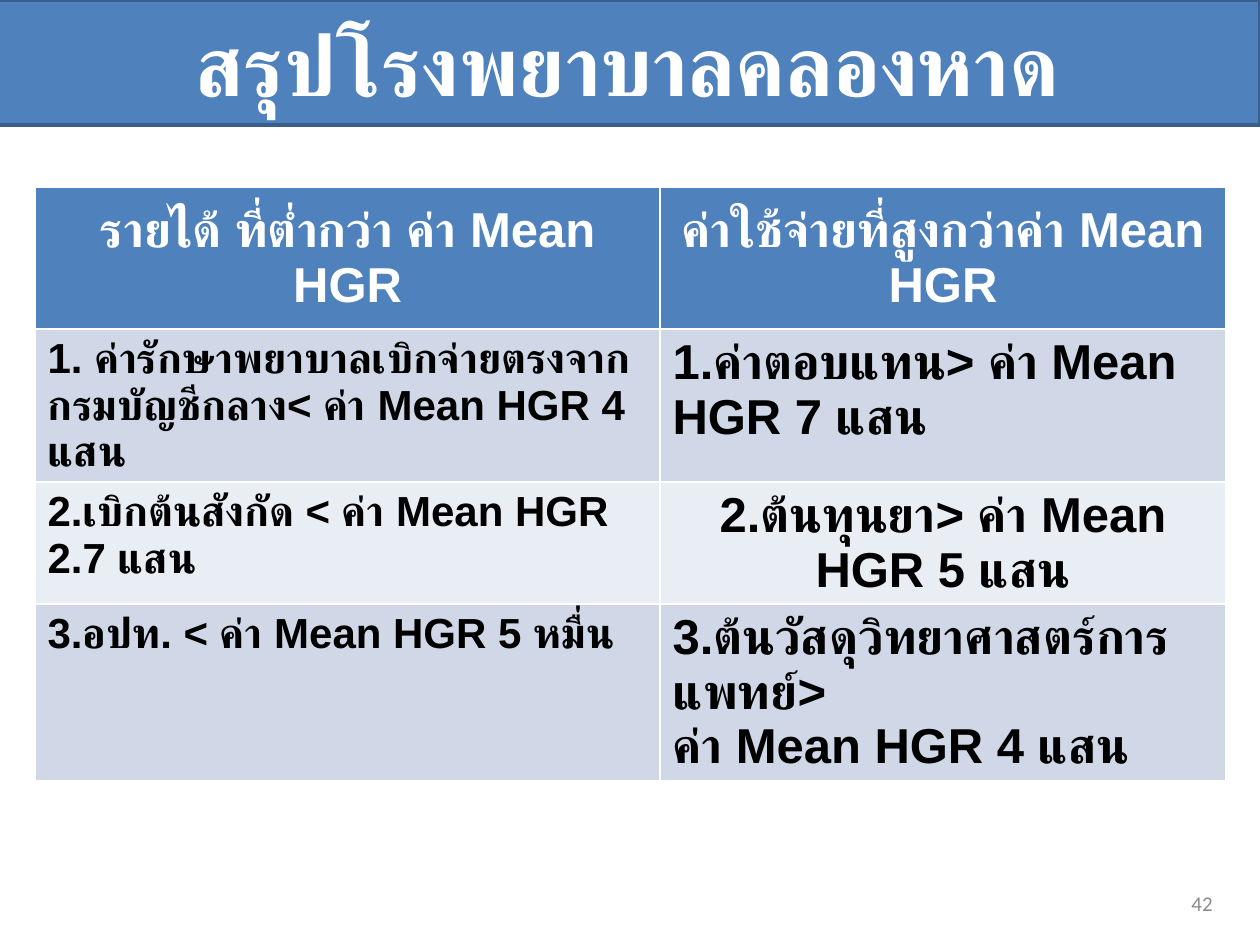
from lxml import etree
from pptx import Presentation
from pptx import util as u
from pptx.dml.color import RGBColor
from pptx.enum import text
from pptx.oxml.ns import qn

PX = 914400 / 126
LEFT, CENTER, RIGHT = text.PP_ALIGN.LEFT, text.PP_ALIGN.CENTER, text.PP_ALIGN.RIGHT
MIDDLE = text.MSO_ANCHOR.MIDDLE
BLUE, WHITE, BLACK = "4F81BD", "FFFFFF", "000000"
BANDS = ["D0D8E8", "E9EDF4"]

HEADERS = ["รายได้ ที่ต่ำกว่า ค่า Mean HGR", "ค่าใช้จ่ายที่สูงกว่าค่า Mean HGR"]
# Income text, expense text, expense alignment
ROWS = [
    ("1. ค่ารักษาพยาบาลเบิกจ่ายตรงจากกรมบัญชีกลาง< ค่า Mean HGR 4 แสน",
     "1.ค่าตอบแทน> ค่า Mean HGR 7 แสน", LEFT),
    ("2.เบิกต้นสังกัด < ค่า Mean HGR 2.7 แสน",
     "2.ต้นทุนยา> ค่า Mean HGR 5 แสน", CENTER),
    ("3.อปท. < ค่า Mean HGR 5 หมื่น",
     "3.ต้นวัสดุวิทยาศาสตร์การแพทย์>\nค่า Mean HGR 4 แสน", LEFT),
]


def px(n):
    return u.Emu(round(n * PX))


def paint(color_format, value):
    color_format.rgb = RGBColor.from_string(value)


def fill(obj, value):
    obj.fill.solid()
    paint(obj.fill.fore_color, value)


def write(tf, content, size, color, align, name="Arial", bold=True):
    tf.text = content
    for p in tf.paragraphs:
        p.alignment = align
        for r in p.runs:
            for key, value in dict(size=u.Pt(size), name=name, bold=bold).items():
                setattr(r.font, key, value)
            paint(r.font.color, color)
            # Thai letters take the complex-script font
            cs = etree.SubElement(r.font._element, qn("a:cs"))
            cs.set("typeface", name)


def add_banner(s, content):
    sp = s.shapes.title
    for key, value in dict(left=-5, top=0, width=1265, height=125).items():
        setattr(sp, key, px(value))
    fill(sp, BLUE)
    paint(sp.line.color, "3A5F8C")
    sp.line.width = u.Pt(2)
    tf = sp.text_frame
    tf.auto_size = text.MSO_AUTO_SIZE.NONE
    tf.vertical_anchor = MIDDLE
    write(tf, content, 48, WHITE, CENTER)


def add_summary(s):
    frame = s.shapes.add_table(len(ROWS) + 1, 2, px(35), px(187), px(1191), px(465))
    table = frame.table
    for column, width in zip(table.columns, (625, 566)):
        column.width = px(width)
    for i, row in enumerate(table.rows):
        row.height = px(78 if i else 142)

    # Header row
    for c, header in enumerate(HEADERS):
        cell = table.cell(0, c)
        fill(cell, BLUE)
        cell.vertical_anchor = MIDDLE
        write(cell.text_frame, header, 28, WHITE, CENTER)

    # Banded body rows
    for i, (income, expense, align) in enumerate(ROWS):
        parts = [(income, 24, LEFT), (expense, 28, align)]
        for c, (content, size, side) in enumerate(parts):
            cell = table.cell(i + 1, c)
            fill(cell, BANDS[i % 2])
            write(cell.text_frame, content, size, BLACK, side)


def add_page_number(s, number):
    tf = s.shapes.add_textbox(px(931), px(878), px(294), px(50)).text_frame
    tf.word_wrap = True
    tf.vertical_anchor = MIDDLE
    write(tf, number, 12, "8C8C8C", RIGHT, "Calibri", False)


def main():
    prs = Presentation()
    prs.slide_width, prs.slide_height = px(1260), px(945)
    s = prs.slides.add_slide(prs.slide_layouts[5])
    add_summary(s)
    add_banner(s, "สรุปโรงพยาบาลคลองหาด")
    add_page_number(s, "42")
    prs.save("out.pptx")


if __name__ == "__main__":
    main()
